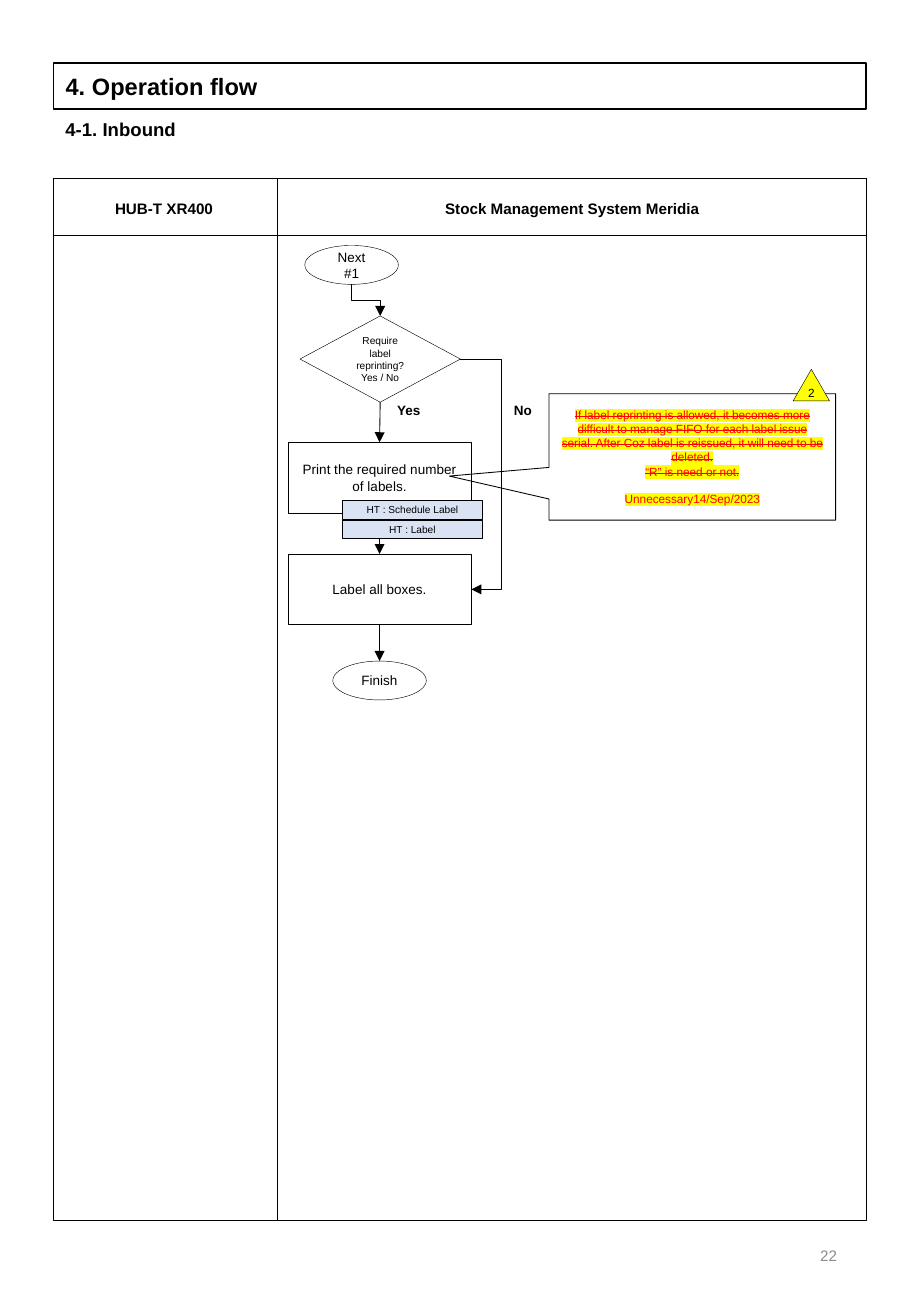
"""Build the inbound operation flow page."""
from lxml import etree
from pptx import Presentation
from pptx.dml.color import RGBColor
from pptx.enum.shapes import MSO_CONNECTOR, MSO_SHAPE
from pptx.enum.text import MSO_ANCHOR, MSO_AUTO_SIZE, PP_ALIGN
from pptx.oxml.ns import qn
from pptx.util import Inches, Pt

RECT, OVAL = MSO_SHAPE.RECTANGLE, MSO_SHAPE.OVAL
DIAMOND = MSO_SHAPE.FLOWCHART_DECISION
CALLOUT = MSO_SHAPE.RECTANGULAR_CALLOUT
PEAK = MSO_SHAPE.ISOSCELES_TRIANGLE
STRAIGHT, ELBOW = MSO_CONNECTOR.STRAIGHT, MSO_CONNECTOR.ELBOW
LEFT, MID, RIGHT = PP_ALIGN.LEFT, PP_ALIGN.CENTER, PP_ALIGN.RIGHT
TOP, CENTRE = MSO_ANCHOR.TOP, MSO_ANCHOR.MIDDLE
FIXED = MSO_AUTO_SIZE.NONE

THEME = {
    "font": "Arial",
    "ink": "000000", "grey": "8C8C8C", "red": "FF0000",
    "blue": "DAE3F3", "yellow": "FFFF00",
    "title": 14, "sub": 11, "head": 9, "step": 8, "note": 7, "small": 6,
    "hair": 0.25, "thin": 0.5, "edge": 1,
}


def write(shape, lines, size="step", color="ink", bold=False, align=MID, anchor=CENTRE):
    """Fill a shape with one formatted paragraph per line."""
    frame = shape.text_frame
    frame.text = "\n".join(lines)
    for name, value in {"word_wrap": True, "auto_size": FIXED, "vertical_anchor": anchor}.items():
        setattr(frame, name, value)
    look = {"name": THEME["font"], "size": Pt(THEME[size]), "bold": bold}
    for para in frame.paragraphs:
        para.alignment = align
        font = para.runs[0].font
        for name, value in look.items():
            setattr(font, name, value)
        font.color.rgb = RGBColor.from_string(THEME[color])


def style(item, weight, arrow=False):
    """Give a shape or connector a black line without a shadow."""
    item.line.color.rgb = RGBColor.from_string(THEME["ink"])
    item.line.width = Pt(THEME[weight])
    if arrow:
        etree.SubElement(item.line._get_or_add_ln(), qn("a:tailEnd"), type="triangle")


deck = Presentation()
deck.slide_width, deck.slide_height = Inches(7.5), Inches(10.83)
slide = deck.slides.add_slide(deck.slide_layouts[5])
shapes = slide.shapes

title = shapes.title
frame = {"left": 0.44, "top": 0.52, "width": 6.69, "height": 0.38}
for name, value in frame.items():
    setattr(title, name, Inches(value))
write(title, ["4. Operation flow"], "title", bold=True, align=LEFT)
style(title, "edge")

texts = [
    ("4-1. Inbound", (0.44, 0.92, 6.69, 0.29), {"size": "sub", "bold": True, "align": LEFT, "anchor": TOP}),
    ("HUB-T XR400", (0.43, 1.48, 1.84, 0.47), {"size": "head", "bold": True}),
    ("Stock Management System Meridia", (2.29, 1.48, 4.84, 0.47), {"size": "head", "bold": True}),
    ("Yes", (3.11, 3.26, 0.51, 0.23), {"bold": True}),
    ("No", (4.05, 3.26, 0.51, 0.23), {"bold": True}),
    ("22", (5.3, 10.04, 1.69, 0.58), {"size": "head", "color": "grey", "align": RIGHT}),
]
for text, place, look in texts:
    write(shapes.add_textbox(*map(Inches, place)), [text], **look)

note = [
    "If label reprinting is allowed, it becomes more difficult to manage FIFO for each label issue "
    "serial. After Coz label is reissued, it will need to be deleted.",
    "“R” is need or not.",
    "Unnecessary14/Sep/2023",
]
parts = [
    ("frame", RECT, (0.44, 1.47, 6.69, 8.57), [], {}),
    ("head", RECT, (0.44, 1.47, 6.69, 0.47), [], {}),
    ("next", OVAL, (2.51, 2.02, 0.77, 0.32), ["Next #1"], {}),
    ("ask", DIAMOND, (2.47, 2.6, 1.32, 0.71), ["Require label reprinting?", "Yes / No"], {"size": "small"}),
    ("print", RECT, (2.37, 3.64, 1.51, 0.58), ["Print the required number of labels."], {}),
    ("label", RECT, (2.37, 4.56, 1.51, 0.58), ["Label all boxes."], {}),
    ("finish", OVAL, (2.74, 5.44, 0.77, 0.32), ["Finish"], {}),
    ("note", CALLOUT, (4.52, 3.24, 2.36, 1.04), note, {"size": "note", "color": "red"}),
    ("plan", RECT, (2.82, 4.12, 1.15, 0.15), ["HT : Schedule Label"], {"size": "small"}),
    ("tag", RECT, (2.82, 4.28, 1.15, 0.15), ["HT : Label"], {"size": "small"}),
    ("mark", PEAK, (6.53, 3.04, 0.3, 0.26), ["2"], {"size": "note"}),
]
fills = {"plan": "blue", "tag": "blue", "mark": "yellow"}
flow = {}
for name, kind, place, lines, look in parts:
    shape = flow[name] = shapes.add_shape(kind, *map(Inches, place))
    shape.shadow.inherit = False
    style(shape, "thin" if name == "note" else "hair")
    if name in fills:
        shape.fill.solid()
        shape.fill.fore_color.rgb = RGBColor.from_string(THEME[fills[name]])
    else:
        shape.fill.background()
    if lines:
        write(shape, lines, **look)

for side in ("left", "right", "top", "bottom"):
    setattr(flow["mark"].text_frame, "margin_" + side, 0)

flow["note"].adjustments[0] = -0.848
flow["note"].adjustments[1] = 0.152
paras = flow["note"].text_frame.paragraphs
paras[-1].space_before = Pt(8)
for para in paras:
    props = para.runs[0].font._element
    glow = etree.Element(qn("a:highlight"))
    etree.SubElement(glow, qn("a:srgbClr"), val=THEME["yellow"])
    props.find(qn("a:solidFill")).addnext(glow)
    if para is not paras[-1]:
        props.set("strike", "sngStrike")

links = [
    (STRAIGHT, (2.28, 1.47, 2.28, 10.04), None, None),
    (ELBOW, (2.89, 2.34, 3.13, 2.6), None, ("ask", 0)),
    (STRAIGHT, (3.13, 3.31, 3.13, 3.64), ("ask", 2), ("print", 0)),
    (STRAIGHT, (3.13, 4.22, 3.13, 4.56), ("print", 2), ("label", 0)),
    (STRAIGHT, (3.13, 5.14, 3.13, 5.44), ("label", 2), ("finish", 0)),
    (ELBOW, (3.79, 2.95, 3.88, 4.85), ("ask", 3), ("label", 3)),
]
for kind, ends, start, stop in links:
    link = shapes.add_connector(kind, *map(Inches, ends))
    style(link, "thin", arrow=stop is not None)
    props = link._element.spPr
    etree.SubElement(props, qn("a:effectLst"))
    if start:
        link.begin_connect(flow[start[0]], start[1])
    if stop:
        link.end_connect(flow[stop[0]], stop[1])
    if kind == ELBOW and start:
        guides = props.find(qn("a:prstGeom")).find(qn("a:avLst"))
        etree.SubElement(guides, qn("a:gd"), name="adj1", fmla="val 378400")
    elif kind == ELBOW:
        wide, high = link.width, link.height
        link.left += (wide - high) // 2
        link.top += (high - wide) // 2
        link.width, link.height = high, wide
        turn = props.find(qn("a:xfrm"))
        turn.set("rot", "5400000")
        turn.set("flipV", "1")

for name in ("plan", "tag"):
    shapes._spTree.append(flow[name]._element)

deck.save("out.pptx")
